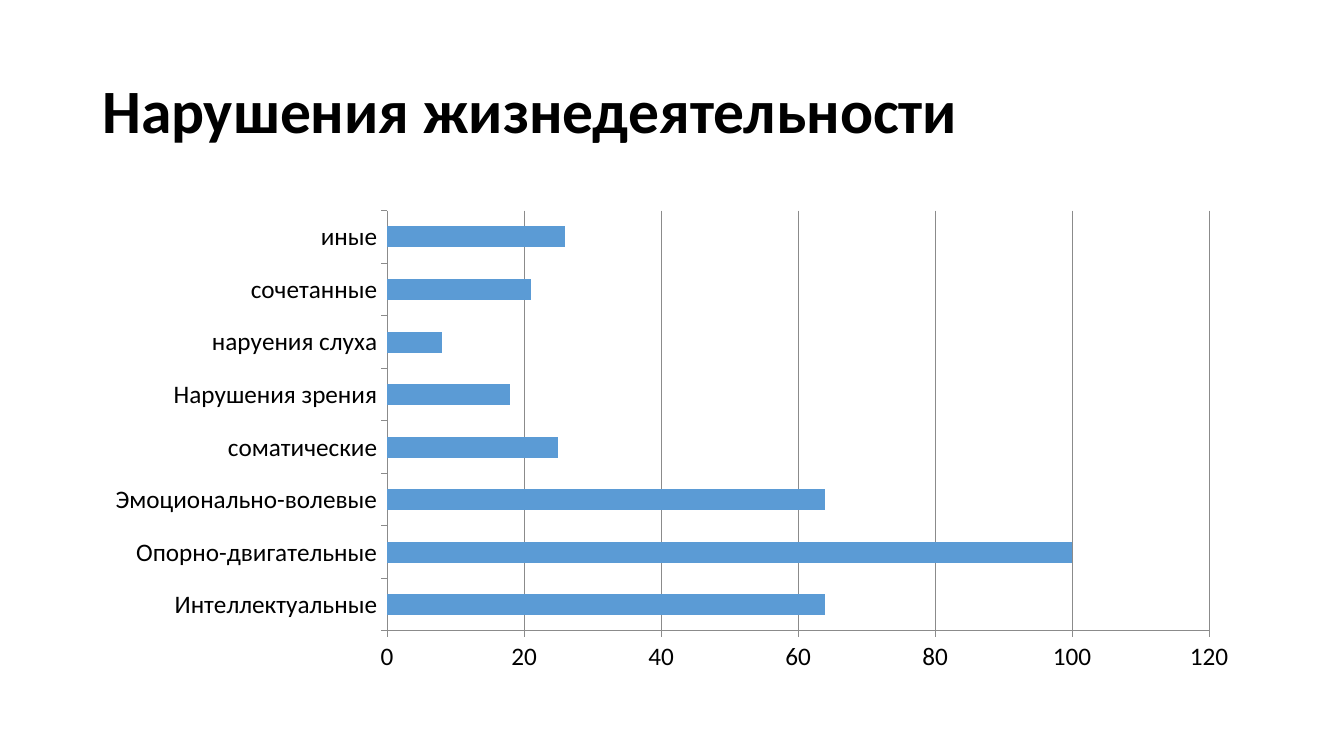
from dataclasses import dataclass

from pptx import Presentation
from pptx.chart.data import CategoryChartData
from pptx.dml.color import RGBColor
from pptx.enum.chart import XL_CHART_TYPE, XL_TICK_MARK
from pptx.enum.text import MSO_ANCHOR
from pptx.util import Cm, Pt

BAR_CLUSTERED = XL_CHART_TYPE.BAR_CLUSTERED
TICK_OUTSIDE = XL_TICK_MARK.OUTSIDE
ANCHOR_MIDDLE = MSO_ANCHOR.MIDDLE


@dataclass(frozen=True)
class Theme:
    font: str = "Calibri"
    text: RGBColor = RGBColor(0x00, 0x00, 0x00)
    bar: RGBColor = RGBColor(0x5B, 0x9B, 0xD5)
    line: RGBColor = RGBColor(0x8B, 0x8B, 0x8B)
    title_size: Pt = Pt(44)
    label_size: Pt = Pt(18)
    line_width: Pt = Pt(0.75)


IMPAIRMENTS = {
    "Интеллектуальные": 64,
    "Опорно-двигательные": 100,
    "Эмоционально-волевые": 64,
    "соматические": 25,
    "Нарушения зрения": 18,
    "наруения слуха": 8,
    "сочетанные": 21,
    "иные": 26,
}


def set_values(target, values):
    for name, value in values.items():
        setattr(target, name, value)


class SlideBuilder:
    def __init__(self, page, theme):
        self.page = page
        self.theme = theme

    def style_font(self, font, size, bold=False):
        set_values(font, {"name": self.theme.font, "size": size, "bold": bold})
        font.color.rgb = self.theme.text

    def style_line(self, line):
        line.color.rgb = self.theme.line
        line.width = self.theme.line_width

    def title(self, text, left, top, width, height):
        box = self.page.shapes.add_textbox(Cm(left), Cm(top), Cm(width), Cm(height))
        set_values(box.text_frame, {"word_wrap": True, "vertical_anchor": ANCHOR_MIDDLE})
        para = box.text_frame.paragraphs[0]
        para.line_spacing = 0.9
        span = para.add_run()
        span.text = text
        self.style_font(span.font, self.theme.title_size, bold=True)

    def bar_chart(self, values, left, top, width, height):
        data = CategoryChartData()
        data.categories = values.keys()
        data.add_series("Series 1", values.values())
        chart = self.page.shapes.add_chart(
            BAR_CLUSTERED, Cm(left), Cm(top), Cm(width), Cm(height), data
        ).chart
        set_values(chart, {"has_legend": False, "has_title": False})
        self.style_font(chart.font, self.theme.label_size)

        plot = chart.plots[0]
        set_values(plot, {"gap_width": 150, "vary_by_categories": False})
        fill = plot.series[0].format.fill
        fill.solid()
        fill.fore_color.rgb = self.theme.bar

        for axis in (chart.category_axis, chart.value_axis):
            axis.major_tick_mark = TICK_OUTSIDE
            self.style_line(axis.format.line)
        set_values(
            chart.value_axis,
            {"minimum_scale": 0, "maximum_scale": 120, "major_unit": 20, "has_major_gridlines": True},
        )
        self.style_line(chart.value_axis.major_gridlines.format.line)


def main():
    deck = Presentation()
    set_values(deck, {"slide_width": Cm(33.87), "slide_height": Cm(19.05)})
    page = deck.slides.add_slide(deck.slide_layouts[6])
    builder = SlideBuilder(page, Theme())
    builder.title("Нарушения жизнедеятельности", 2.33, 1.01, 29.21, 3.68)
    builder.bar_chart(IMPAIRMENTS, 2.33, 5.07, 29.21, 12.09)
    deck.save("out.pptx")


if __name__ == "__main__":
    main()
